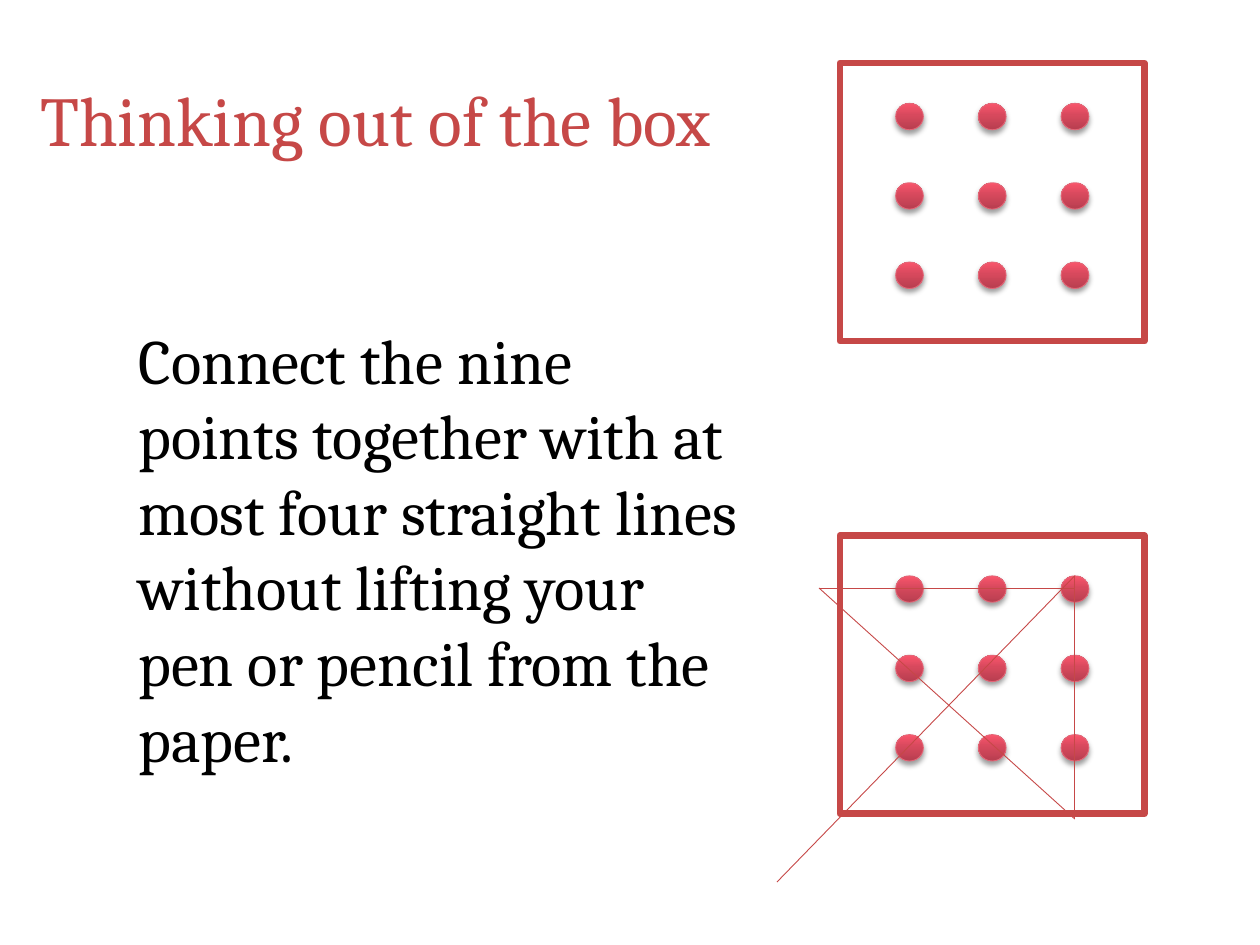
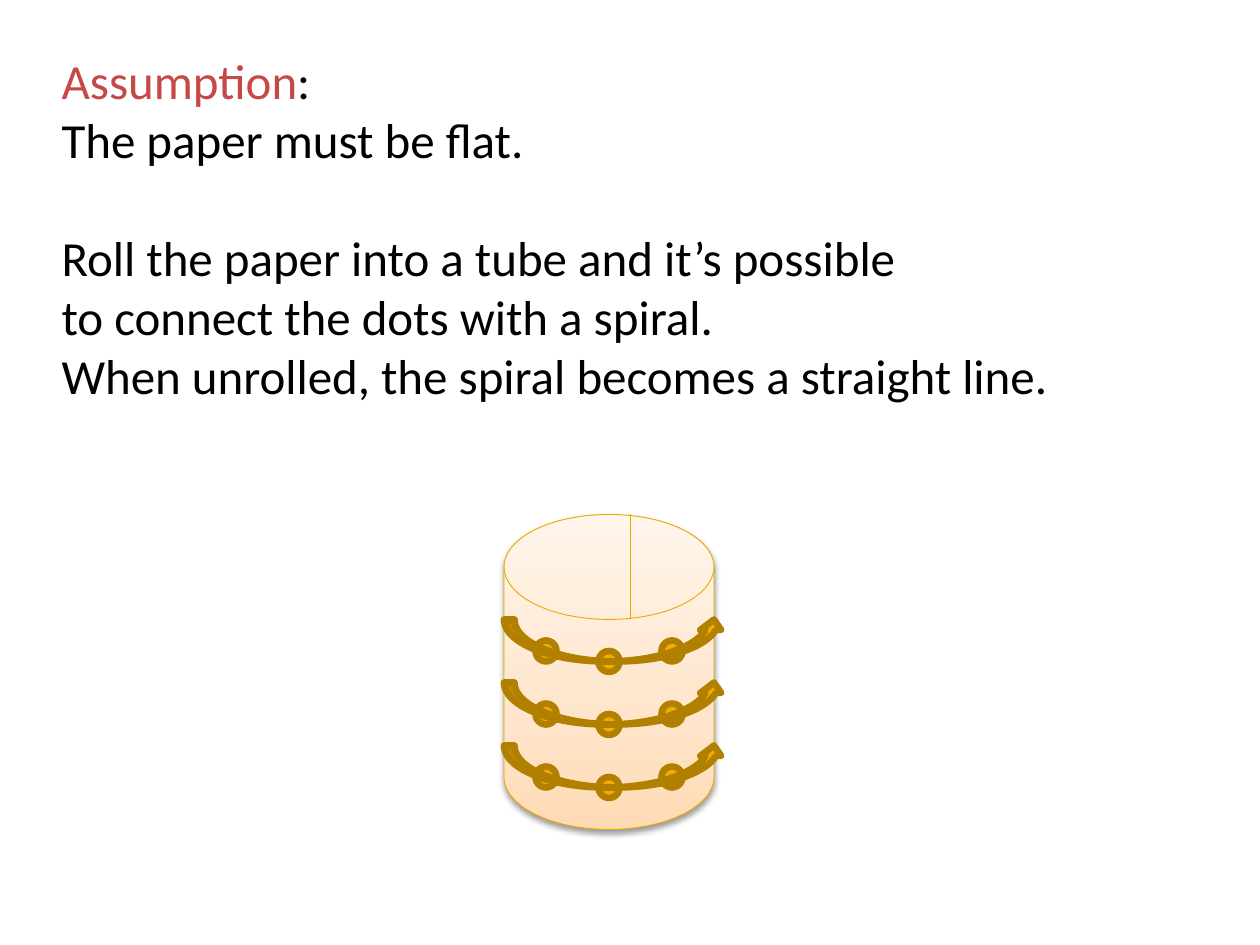
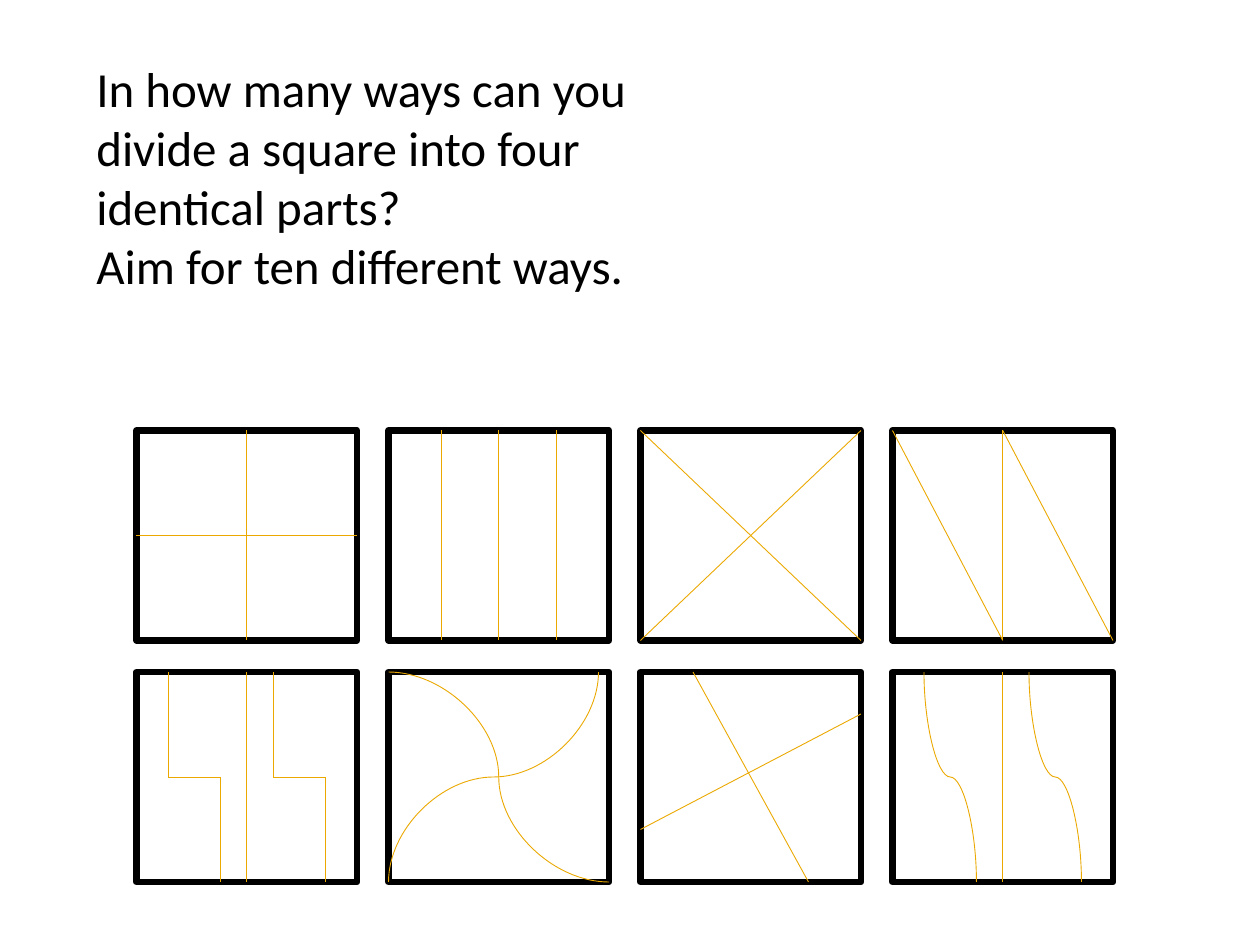
from dataclasses import dataclass
from lxml import etree
from pptx import Presentation
from pptx.dml.color import RGBColor
from pptx.enum.shapes import MSO_CONNECTOR, MSO_SHAPE
from pptx.oxml.ns import qn
from pptx.util import Inches, Pt

RECT = MSO_SHAPE.RECTANGLE
OVAL = MSO_SHAPE.OVAL
DISK = MSO_SHAPE.FLOWCHART_MAGNETIC_DISK
ARROW = MSO_SHAPE.CURVED_UP_ARROW
LINE = MSO_CONNECTOR.STRAIGHT
CURVE = MSO_CONNECTOR.CURVE
COLS, ROWS = 120, 90
CELL = Inches(10) / COLS


@dataclass(frozen=True)
class Theme:
    red: str = "C64847"
    rim: str = "E46778"
    gold: str = "EBA900"
    bead: str = "F0AD00"
    brown: str = "B28000"
    black: str = "000000"
    white: str = "FFFFFF"
    rose: tuple = ((0, "B73E4F"), (55, "D7495D"), (100, "FA556C"))
    peach: tuple = ((0, "FFDBB5"), (35, "FFE5CB"), (100, "FFF5EB"))
    serif: str = "Cambria"
    sans: str = "Calibri"
    title: int = 40
    lead: int = 36
    body: int = 28
    thin: float = 0.5
    thick: float = 3.78


T = Theme()


def rgb(code):
    return RGBColor.from_string(code)


def grid(*cells):
    return [round(c * CELL) for c in cells]


def add(node, tag, **attrs):
    return etree.SubElement(node, qn(tag), **{k: str(v) for k, v in attrs.items()})


def shade(shape, stops):
    shape.fill.gradient()
    shape.fill.gradient_angle = 90
    gs_list = shape.element.spPr.find(qn("a:gradFill")).find(qn("a:gsLst"))
    for stop in list(gs_list):
        gs_list.remove(stop)
    for pos, code in stops:
        add(add(gs_list, "a:gs", pos=pos * 1000), "a:srgbClr", val=code)


def cast(shape, blur):
    effects = shape.element.spPr.find(qn("a:effectLst"))
    outer = add(effects, "a:outerShdw", blurRad=Pt(blur), dist=Pt(2),
                dir=5400000, rotWithShape=0)
    add(add(outer, "a:srgbClr", val=T.black), "a:alpha", val=38000)


def draw(group, kind, x, y, w, h, fill, line, width, blur=0):
    shape = group.shapes.add_shape(kind, *grid(x, y, w, h))
    shape.shadow.inherit = False
    if isinstance(fill, tuple):
        shade(shape, fill)
    else:
        shape.fill.solid()
        shape.fill.fore_color.rgb = rgb(fill)
    shape.line.color.rgb = rgb(line)
    shape.line.width = Pt(width)
    if blur:
        cast(shape, blur)
    return shape


def link(group, x1, y1, x2, y2, color, kind=LINE):
    join = group.shapes.add_connector(kind, *grid(x1, y1, x2, y2))
    join.line.color.rgb = rgb(color)
    join.line.width = Pt(T.thin)
    add(join.element.spPr, "a:effectLst")
    return join


def drop(group, x1, y1, x2, y2, color):
    turn = 1 if x2 < x1 else -1
    mid_x, mid_y = (x1 + x2) / 2, (y1 + y2) / 2
    dx, dy = turn * (y2 - y1) / 2, turn * (x1 - x2) / 2
    join = link(group, mid_x - dx, mid_y - dy, mid_x + dx, mid_y + dy, color, CURVE)
    join.rotation = 90 * turn % 360


def write(slide, box, paras, size, font, color=T.black, wrap=True):
    frame = slide.shapes.add_textbox(*grid(*box)).text_frame
    frame.word_wrap = wrap
    for i, text in enumerate(paras):
        para = frame.paragraphs[0] if i == 0 else frame.add_paragraph()
        para.text = text
        para.font.size = Pt(size)
        para.font.name = font
        para.font.color.rgb = rgb(color)
    return frame


def board(slide, x, y, path_lines=()):
    group = slide.shapes.add_group_shape()
    draw(group, RECT, x, y, 29, 26.5, T.white, T.red, T.thick)
    for row in range(3):
        for col in range(3):
            draw(group, OVAL, x + 5.3 + 7.88 * col, y + 3.84 + 7.56 * row,
                 2.64, 2.52, T.rose, T.rim, T.thin, 3.1)
    for x1, y1, x2, y2 in path_lines:
        link(group, x + x1, y + y1, x + x2, y + y2, T.red)


def tube(slide, x, y):
    group = slide.shapes.add_group_shape()
    draw(group, DISK, x, y, 20, 30, T.peach, T.gold, T.thin, 3.5)
    turns = [y + 6 * i for i in range(3)]
    for top in turns:
        for dx, dy in ((3, 12), (9, 13), (15, 12)):
            draw(group, OVAL, x + dx, top + dy, 2, 2, T.bead, T.brown, T.thick)
    for top in turns:
        draw(group, ARROW, x, top + 10, 21, 4, T.bead, T.brown, T.thick)
    link(group, x + 12, y, x + 12, y + 10, T.gold)


W, H = 21, 20
MID = (W / 2, 0, W / 2, H)


def step(x):
    half = H / 2
    return [(x, 0, x, half), (x, half, x + 5, half), (x + 5, half, x + 5, H)]


TILES = [
    ([MID, (0, H / 2, W, H / 2)], [], []),
    ([MID, (5, 0, 5, H), (16, 0, 16, H)], [], []),
    ([(0, 0, W, H), (W, 0, 0, H)], [], []),
    ([MID, (0, 0, W / 2, H), (W / 2, 0, W, H)], [], []),
    ([MID, *step(3), *step(13)], [], []),
    ([], [(0, 0, W, H)], [(20, 0, 0, H)]),
    ([(5, 0, 16, H), (0, 15, W, 4)], [], []),
    ([MID], [], [(3, 0, 8, H), (13, 0, 18, H)]),
]


def tile(group, x, y, lines, waves, drops):
    def place(cut):
        x1, y1, x2, y2 = cut
        return x + x1, y + y1, x + x2, y + y2

    draw(group, RECT, x, y, W, H, T.white, T.black, T.thick)
    for cut in lines:
        link(group, *place(cut), T.gold)
    for cut in waves:
        link(group, *place(cut), T.gold, CURVE)
    for cut in drops:
        drop(group, *place(cut), T.gold)


def dots_slide(slide):
    write(slide, (2.64, 6.72, 69, 9.24), ["Thinking out of the box"],
          T.title, T.serif, T.red, False)
    board(slide, 80, 6)
    write(slide, (12, 30, 60, 44.88),
          ["Connect the nine points together with at most four straight lines "
           "without lifting your pen or pencil from the paper."],
          T.lead, T.serif)
    board(slide, 80, 51, [(-2, 5, 22.36, 5), (22.36, 3.84, 22.36, 27),
                          (-2, 5, 22.36, 27), (22.36, 3.84, -6, 33)])


def tube_slide(slide):
    frame = write(slide, (4.68, 4.2, 97.32, 40.8),
                  ["Assumption",
                   "The paper must be flat.",
                   "Roll the paper into a tube and it’s possible",
                   "to connect the dots with a spiral.",
                   "When unrolled, the spiral becomes a straight line."],
                  T.body, T.sans, wrap=False)
    head = frame.paragraphs[0]
    head.runs[0].font.color.rgb = rgb(T.red)
    head.add_run().text = ":"
    frame.paragraphs[2].space_before = Pt(34)
    tube(slide, 48, 49)


def square_slide(slide):
    write(slide, (8, 5, 60, 23.88),
          ["In how many ways can you divide a square into four identical parts?",
           "Aim for ten different ways."], T.body, T.sans)
    group = slide.shapes.add_group_shape()
    for i, cuts in enumerate(TILES):
        row, col = divmod(i, 4)
        tile(group, 13 + 24 * col, 41 + 23 * row, *cuts)


def main():
    deck = Presentation()
    deck.slide_width, deck.slide_height = grid(COLS, ROWS)
    for build in (dots_slide, tube_slide, square_slide):
        build(deck.slides.add_slide(deck.slide_layouts[6]))
    deck.save("out.pptx")


if __name__ == "__main__":
    main()
